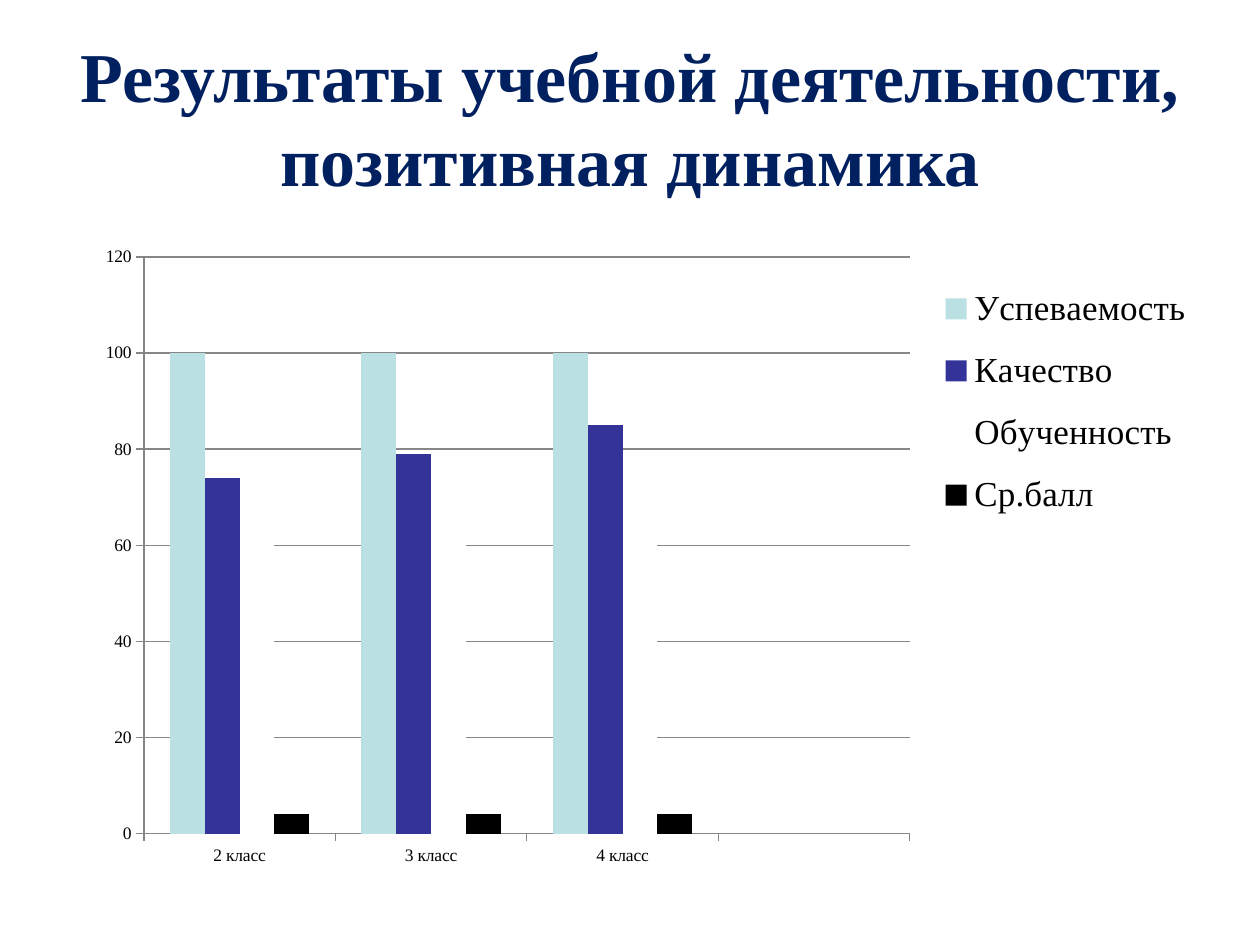
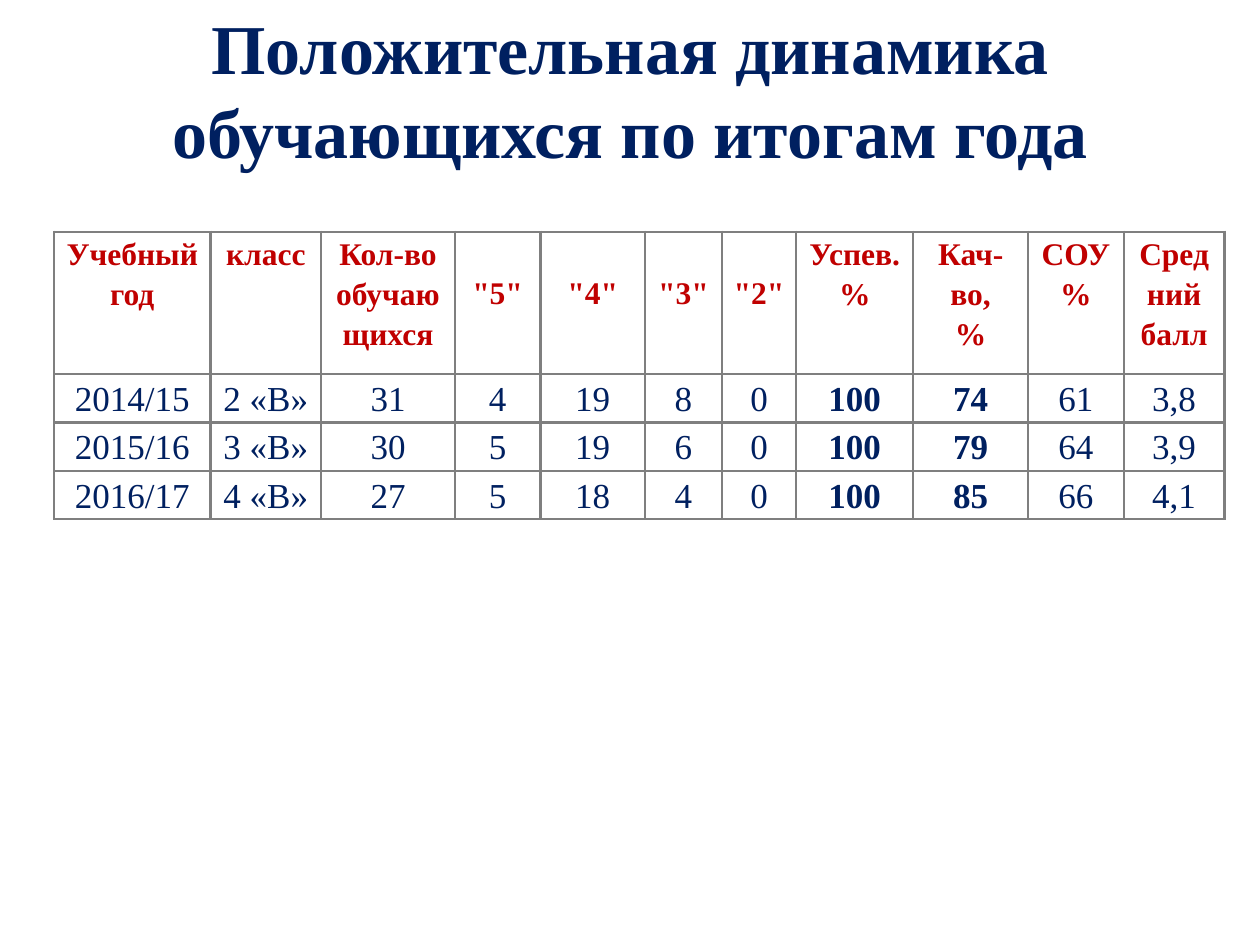
"""Builds two slides on class results: a column chart and a yearly table."""
from collections import namedtuple

from lxml import etree
from pptx import Presentation
from pptx.chart.data import CategoryChartData
from pptx.dml.color import RGBColor
from pptx.enum.chart import XL_CHART_TYPE, XL_LEGEND_POSITION, XL_TICK_MARK
from pptx.enum.text import MSO_ANCHOR, PP_ALIGN
from pptx.oxml import parse_xml
from pptx.oxml.ns import nsdecls, qn
from pptx.util import Inches, Pt

CENTER = PP_ALIGN.CENTER
MIDDLE = MSO_ANCHOR.MIDDLE
TOP = MSO_ANCHOR.TOP
COLUMNS = XL_CHART_TYPE.COLUMN_CLUSTERED
LEGEND_RIGHT = XL_LEGEND_POSITION.RIGHT
TICK_OUT = XL_TICK_MARK.OUTSIDE

Theme = namedtuple("Theme", "font navy red black white grid border "
                   "title_size title_line header_size body_size axis_size legend_size")
THEME = Theme("Times New Roman", "002060", "C00000", "000000", "FFFFFF", "878787", "7F7F7F",
              Pt(40), Pt(48), Pt(18), Pt(20), Pt(10), Pt(20))


def add_text(para, text, size, color, bold):
    para.alignment = CENTER
    span = para.add_run()
    span.text = text
    span.font.name = THEME.font
    span.font.size = size
    span.font.bold = bold
    span.font.color.rgb = RGBColor.from_string(color)


def set_layout(parent, index, settings):
    for old_layout in parent.findall(qn("c:layout")):
        parent.remove(old_layout)
    layout = parse_xml(f"<c:layout {nsdecls('c')}><c:manualLayout/></c:layout>")
    for name, value in settings.items():
        etree.SubElement(layout[0], qn(f"c:{name}")).set("val", str(value))
    parent.insert(index, layout)


deck = Presentation()
deck.slide_width = Inches(10)
deck.slide_height = Inches(7.5)

titles = [
    (0.3, ["Результаты учебной деятельности,", "позитивная динамика"]),
    (0.08, ["Положительная динамика", "обучающихся по итогам года"]),
]
pages = []
for top, lines in titles:
    page = deck.slides.add_slide(deck.slide_layouts[6])
    box = page.shapes.add_textbox(Inches(0.5), Inches(top), Inches(9), Inches(1.25))
    frame = box.text_frame
    frame.word_wrap = True
    frame.vertical_anchor = MIDDLE
    para = frame.paragraphs[0]
    para.line_spacing = THEME.title_line
    for number, line in enumerate(lines):
        if number:
            para.add_line_break()
        add_text(para, line, THEME.title_size, THEME.navy, True)
    pages.append(page)
chart_page, table_page = pages

results = [
    ("Успеваемость", (100, 100, 100, None), "BBE0E3"),
    ("Качество", (74, 79, 85, None), "333399"),
    ("Обученность", (60, 62, 66, None), THEME.white),
    ("Ср.балл", (4, 4, 4, None), THEME.black),
]
chart_data = CategoryChartData()
chart_data.categories = ["2 класс", "3 класс", "4 класс", ""]
for name, values, color in results:
    chart_data.add_series(name, values)
chart = chart_page.shapes.add_chart(
    COLUMNS, Inches(0.67), Inches(1.86), Inches(8.9), Inches(5.12), chart_data).chart
chart.has_title = False
chart.font.name = THEME.font
chart.font.size = THEME.axis_size
chart.font.color.rgb = RGBColor.from_string(THEME.black)

plot = chart.plots[0]
plot.gap_width = 150
plot.overlap = 0
plot.vary_by_categories = False
for series, (name, values, color) in zip(plot.series, results):
    series.format.fill.solid()
    series.format.fill.fore_color.rgb = RGBColor.from_string(color)

value_axis = chart.value_axis
value_axis.minimum_scale = 0
value_axis.maximum_scale = 120
value_axis.major_unit = 20
value_axis.has_major_gridlines = True
for axis in (chart.category_axis, value_axis):
    axis.major_tick_mark = TICK_OUT
for lined in (chart.category_axis, value_axis, value_axis.major_gridlines):
    lined.format.line.width = Pt(0.75)
    lined.format.line.color.rgb = RGBColor.from_string(THEME.grid)

chart.has_legend = True
legend = chart.legend
legend.position = LEGEND_RIGHT
legend.include_in_layout = False
legend.font.name = THEME.font
legend.font.size = THEME.legend_size
legend.font.color.rgb = RGBColor.from_string(THEME.black)

edges = {"xMode": "edge", "yMode": "edge"}
set_layout(chart.element.find(".//" + qn("c:plotArea")), 0,
           {"layoutTarget": "inner", **edges, "x": 0.053, "y": 0.035, "w": 0.683, "h": 0.894})
set_layout(chart.element.find(".//" + qn("c:legend")), 1,
           {**edges, "x": 0.755, "y": 0.05, "w": 0.24, "h": 0.42})

headings = ["Учебный год", "класс", "Кол-во\nобучающихся", '"5"', '"4"', '"3"', '"2"',
            "Успев.\n%", "Кач-во,\n%", "СОУ\n%", "Средний\nбалл"]
years = [
    ["2014/15", "2 «В»", "31", "4", "19", "8", "0", "100", "74", "61", "3,8"],
    ["2015/16", "3 «В»", "30", "5", "19", "6", "0", "100", "79", "64", "3,9"],
    ["2016/17", "4 «В»", "27", "5", "18", "4", "0", "100", "85", "66", "4,1"],
]
column_widths = [1.24, 0.88, 1.06, 0.68, 0.83, 0.61, 0.59, 0.93, 0.91, 0.76, 0.8]
row_heights = [1.13, 0.35, 0.35, 0.35]
bold_columns = (7, 8)

table = table_page.shapes.add_table(
    len(row_heights), len(column_widths), Inches(0.43), Inches(1.84),
    Inches(sum(column_widths)), Inches(sum(row_heights))).table
table.first_row = False
table.horz_banding = False
for column, width in zip(table.columns, column_widths):
    column.width = Inches(width)
for row, height in zip(table.rows, row_heights):
    row.height = Inches(height)

for row_number, texts in enumerate([headings] + years):
    is_header = row_number == 0
    for column_number, text in enumerate(texts):
        cell = table.cell(row_number, column_number)
        is_grade = is_header and text.startswith('"')
        cell.margin_left = cell.margin_right = Inches(0.07)
        cell.margin_top = Inches(0.31 if is_grade else 0)
        cell.margin_bottom = Inches(0)
        cell.vertical_anchor = TOP
        if is_header:
            cell.fill.solid()
            cell.fill.fore_color.rgb = RGBColor.from_string(THEME.white)
        else:
            cell.fill.background()
        for number, line in enumerate(text.split("\n")):
            frame = cell.text_frame
            para = frame.add_paragraph() if number else frame.paragraphs[0]
            para.line_spacing = 1.15
            if is_header:
                add_text(para, line, THEME.header_size, THEME.red, True)
            else:
                add_text(para, line, THEME.body_size, THEME.navy, column_number in bold_columns)
        properties = cell._tc.get_or_add_tcPr()
        for index, side in enumerate("LRTB"):
            properties.insert(index, parse_xml(
                f'<a:ln{side} {nsdecls("a")} w="{Pt(1.5)}"><a:solidFill>'
                f'<a:srgbClr val="{THEME.border}"/></a:solidFill></a:ln{side}>'))

deck.save("out.pptx")
